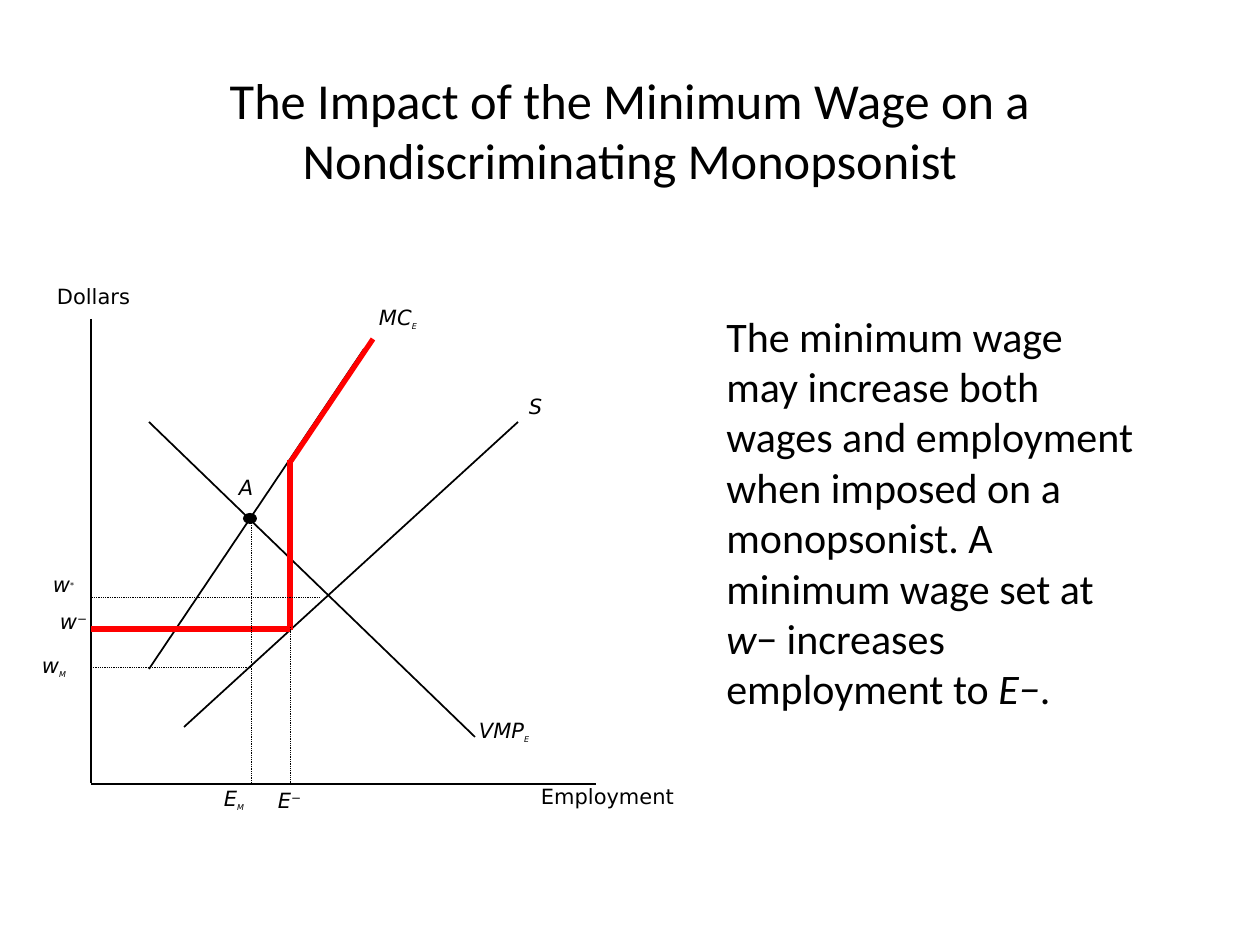
from lxml.etree import SubElement
from pptx import Presentation
from pptx.dml.color import RGBColor as Rgb
from pptx.enum.dml import MSO_LINE as Dash
from pptx.enum.shapes import MSO_CONNECTOR as Link, MSO_SHAPE as Form
from pptx.enum.text import MSO_AUTO_SIZE as Fit, PP_ALIGN as Align
from pptx.oxml.ns import qn
from pptx.util import Emu, Pt

HUES = {"ink": "000000", "wage": "FF0000", "back": "FFFFFF"}
BODY, MATH = "Calibri", "DejaVu Sans"
SUB, SUP = -25000, 30000

CURVES = [
    (91, 319, 91, 783),    # dollars axis
    (91, 784, 596, 784),   # employment axis
    (149, 422, 475, 737),  # VMP
    (184, 727, 518, 422),  # supply
    (149, 669, 364, 349),  # marginal cost
]
FLOOR = [(290, 629, 91, 629), (291, 461, 373, 339), (290, 630, 290, 460)]
GUIDES = [
    (251, 523, 251, 785),
    (251, 667, 91, 667),
    (290, 627, 290, 784),
    (320, 597, 91, 597),
]
# left, top, width, main text, italic, index text, index size, index baseline
LABELS = [
    (379, 305, 67, "MC", True, "E", 8, SUB),
    (57, 284, 89, "Dollars", False, "", 12, 0),
    (529, 394, 37, "S", True, "", 12, 0),
    (239, 475, 37, "A", True, "", 12, 0),
    (60, 609, 38, "w", True, "−", 12, SUP),
    (53, 572, 43, "w", True, "*", 8, SUP),
    (42, 653, 50, "w", True, "M", 8, SUB),
    (479, 718, 82, "VMP", True, "E", 8, SUB),
    (278, 788, 39, "E", True, "−", 12, SUP),
    (224, 786, 50, "E", True, "M", 8, SUB),
    (541, 784, 152, "Employment", False, "", 12, 0),
]
PROSE = [
    ("The minimum wage may increase both wages and employment when "
     "imposed on a monopsonist. A minimum wage set at ", False),
    ("w", True),
    ("− increases employment to ", False),
    ("E−", True),
    (".", False),
]


def px(*vals):
    return [Emu(round(v * 914400 / 126)) for v in vals]


def hue(name):
    return Rgb.from_string(HUES[name])


def style(run, face, size, slant=False):
    font = run.font
    font.name, font.size, font.italic = face, Pt(size), slant
    font.color.rgb = hue("ink")


def add_run(para, text, face, size, slant=False):
    run = para.add_run()
    run.text = text
    style(run, face, size, slant)
    return run


def add_line(group, ends, color="ink", width=1, dash=None):
    link = group.shapes.add_connector(Link.STRAIGHT, *px(*ends))
    link.line.color.rgb = hue(color)
    link.line.width = Pt(width)
    if dash:
        link.line.dash_style = dash
    SubElement(link._element.spPr, qn("a:effectLst"))


def add_label(group, left, top, width, text, slant, index, size, shift):
    """Add a label whose index is raised or lowered by shift."""
    frame = group.shapes.add_textbox(*px(left, top, width, 37)).text_frame
    frame.word_wrap = True
    frame.margin_left = frame.margin_right = 0
    frame.margin_top = frame.margin_bottom = 0
    para = frame.paragraphs[0]
    add_run(para, text, MATH, 12, slant)
    if index:
        run = add_run(para, index, MATH, size, slant)
        run._r.get_or_add_rPr().set("baseline", str(shift))


def add_dot(group, *box):
    dot = group.shapes.add_shape(Form.OVAL, *px(*box))
    dot.shadow.inherit = False
    dot.fill.solid()
    dot.fill.fore_color.rgb = hue("ink")
    dot.line.fill.background()


def add_title(slide, text):
    title = slide.shapes.title
    title.left, title.top, title.width, title.height = px(63, 64, 1134, 131)
    title.fill.solid()
    title.fill.fore_color.rgb = hue("back")
    title.text_frame.text = text
    para = title.text_frame.paragraphs[0]
    para.alignment = Align.CENTER
    style(para.runs[0], BODY, 28.8)


def add_prose(slide):
    frame = slide.shapes.add_textbox(*px(714, 304, 441, 416)).text_frame
    frame.word_wrap = True
    frame.auto_size = Fit.SHAPE_TO_FIT_TEXT
    for text, slant in PROSE:
        add_run(frame.paragraphs[0], text, BODY, 24, slant)


def add_graph(slide):
    group = slide.shapes.add_group_shape()
    for ends in CURVES:
        add_line(group, ends)
    for ends in FLOOR:
        add_line(group, ends, "wage", 3)
    for ends in GUIDES:
        add_line(group, ends, width=0.5, dash=Dash.ROUND_DOT)
    add_dot(group, 243, 513, 14, 11)
    for label in LABELS:
        add_label(group, *label)


def main():
    deck = Presentation()
    deck.slide_width, deck.slide_height = px(1260, 945)
    slide = deck.slides.add_slide(deck.slide_layouts[5])
    add_title(slide, "The Impact of the Minimum Wage on a "
                     "Nondiscriminating Monopsonist")
    add_graph(slide)
    add_prose(slide)
    deck.save("out.pptx")


if __name__ == "__main__":
    main()
